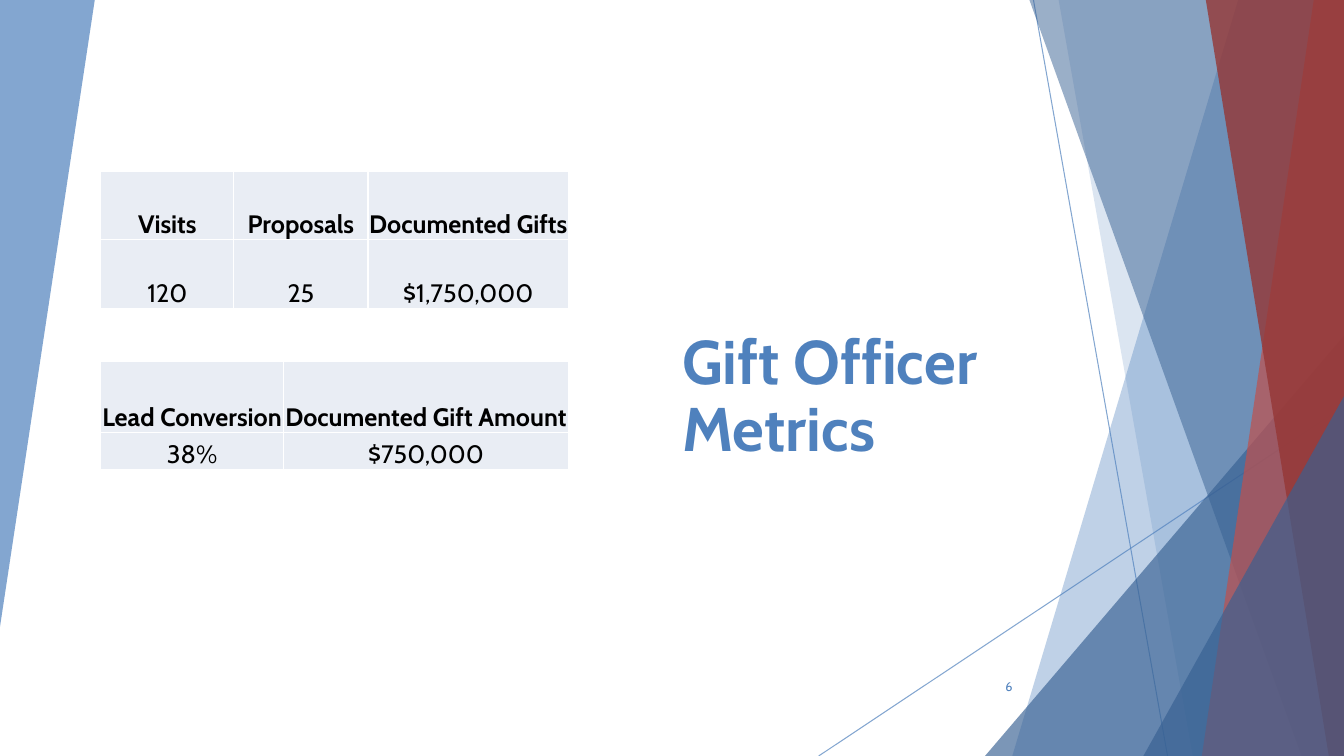
import pptx
import pptx.dml.color
import pptx.enum.shapes
import pptx.enum.text
import pptx.oxml
import pptx.oxml.ns
import pptx.util

Inches = pptx.util.Inches
Pt = pptx.util.Pt
Align = pptx.enum.text.PP_ALIGN
Anchor = pptx.enum.text.MSO_ANCHOR
qn = pptx.oxml.ns.qn
NS = pptx.oxml.ns.nsdecls("a")

WIDTH, HEIGHT = 13.33, 7.5
BLUE, NAVY, RED, MAROON = "4F81BD", "376092", "C0504D", "953735"
BLACK, WHITE, PALE = "000000", "FFFFFF", "E9EDF4"


def color(hex_string):
    return pptx.dml.color.RGBColor.from_string(hex_string)


def write(frame, text, size=18, hue=BLACK, bold=False, align=Align.LEFT,
          anchor=Anchor.MIDDLE, spacing=None):
    frame.word_wrap = True
    frame.vertical_anchor = anchor
    paragraph = frame.paragraphs[0]
    paragraph.alignment = align
    paragraph.line_spacing = spacing
    run = paragraph.add_run()
    run.text = text
    run.font.name = "Cabin"
    run.font.size = Pt(size)
    run.font.bold = bold
    run.font.color.rgb = color(hue)


class MetricsSlide:
    def __init__(self, deck):
        self.slide = deck.slides.add_slide(deck.slide_layouts[6])
        self.shapes = self.slide.shapes

    def set_opacity(self, shape, percent):
        for tone in shape._element.spPr.iter(qn("a:srgbClr")):
            tone.append(pptx.oxml.parse_xml(f'<a:alpha {NS} val="{percent * 1000}"/>'))

    def paint(self, shape, hue, opacity):
        shape.shadow.inherit = False
        shape.fill.solid()
        shape.fill.fore_color.rgb = color(hue)
        shape.line.fill.background()
        self.set_opacity(shape, opacity)

    def facet(self, points, hue, opacity):
        corners = [(Inches(x), Inches(y)) for x, y in points]
        builder = self.shapes.build_freeform(*corners[0])
        builder.add_line_segments(corners[1:], close=True)
        self.paint(builder.convert_to_shape(), hue, opacity)

    def right_band(self, top_x, bottom_x, hue, opacity):
        self.facet([(top_x, 0), (WIDTH, 0), (WIDTH, HEIGHT), (bottom_x, HEIGHT)], hue, opacity)

    def corner_triangle(self, left, top):
        triangle = self.shapes.add_shape(
            pptx.enum.shapes.MSO_SHAPE.ISOSCELES_TRIANGLE,
            Inches(left), Inches(top), Inches(WIDTH - left), Inches(HEIGHT - top))
        triangle.adjustments[0] = 1
        self.paint(triangle, NAVY, 66)

    def ray(self, x1, y1, x2, y2):
        line = self.shapes.add_connector(
            pptx.enum.shapes.MSO_CONNECTOR.STRAIGHT,
            Inches(x1), Inches(y1), Inches(x2), Inches(y2))
        line.line.color.rgb = color(BLUE)
        line.line.width = Pt(0.75)
        self.set_opacity(line, 70)
        line._element.spPr.append(pptx.oxml.parse_xml(f"<a:effectLst {NS}/>"))

    def text(self, left, top, width, height, text, **style):
        box = self.shapes.add_textbox(Inches(left), Inches(top), Inches(width), Inches(height))
        write(box.text_frame, text, **style)

    def cell(self, cell, text, bold):
        cell.margin_left = cell.margin_right = cell.margin_top = Inches(0.01)
        cell.margin_bottom = 0
        write(cell.text_frame, text, bold=bold, align=Align.CENTER)
        cell.vertical_anchor = Anchor.BOTTOM
        properties = cell._tc.get_or_add_tcPr()
        for side in "LRTB":
            properties.append(pptx.oxml.parse_xml(
                f'<a:ln{side} {NS} w="12700"><a:solidFill>'
                f'<a:srgbClr val="{WHITE}"/></a:solidFill></a:ln{side}>'))
        cell.fill.solid()
        cell.fill.fore_color.rgb = color(PALE)

    def table(self, left, top, widths, heights, rows):
        table = self.shapes.add_table(
            len(heights), len(widths), Inches(left), Inches(top),
            Inches(sum(widths)), Inches(sum(heights))).table
        table.first_row = table.horz_banding = False
        for column, width in zip(table.columns, widths):
            column.width = Inches(width)
        for row, height in zip(table.rows, heights):
            row.height = Inches(height)
        for r, values in enumerate(rows):
            for c, value in enumerate(values):
                self.cell(table.cell(r, c), value, bold=r == 0)


def main():
    deck = pptx.Presentation()
    deck.slide_width, deck.slide_height = Inches(WIDTH), Inches(HEIGHT)
    metrics = MetricsSlide(deck)

    # Faceted background, back to front
    metrics.facet([(0, 0), (0.94, 0), (0, 6.22)], BLUE, 70)
    metrics.ray(10.25, 0, 11.58, HEIGHT)
    metrics.ray(WIDTH, 4.03, 8.12, HEIGHT)
    metrics.right_band(12.28, 10.04, BLUE, 36)
    metrics.right_band(10.5, 11.83, BLUE, 20)
    metrics.corner_triangle(9.77, 3.33)
    metrics.right_band(10.21, 12.91, NAVY, 50)
    metrics.right_band(13.03, 11.92, RED, 70)
    metrics.right_band(11.96, 13.18, MAROON, 80)
    metrics.corner_triangle(11.34, 3.93)

    # Title and slide number
    metrics.text(6.67, 1.38, 3.82, 3.28, "Gift Officer Metrics", size=44, hue=BLUE,
                 bold=True, anchor=Anchor.BOTTOM, spacing=0.9)
    metrics.text(9.39, 6.61, 0.75, 0.4, "6", size=9, hue=BLUE, align=Align.RIGHT)

    # Activity and conversion tables
    metrics.table(1, 1.7, [1.32, 1.33, 1.99], [0.68, 0.68],
                  [["Visits", "Proposals", "Documented Gifts"],
                   ["120", "25", "$1,750,000"]])
    metrics.table(1, 3.59, [1.81, 2.83], [0.7, 0.37],
                  [["Lead Conversion", "Documented Gift Amount"],
                   ["38%", "$750,000"]])

    deck.save("out.pptx")


if __name__ == "__main__":
    main()
